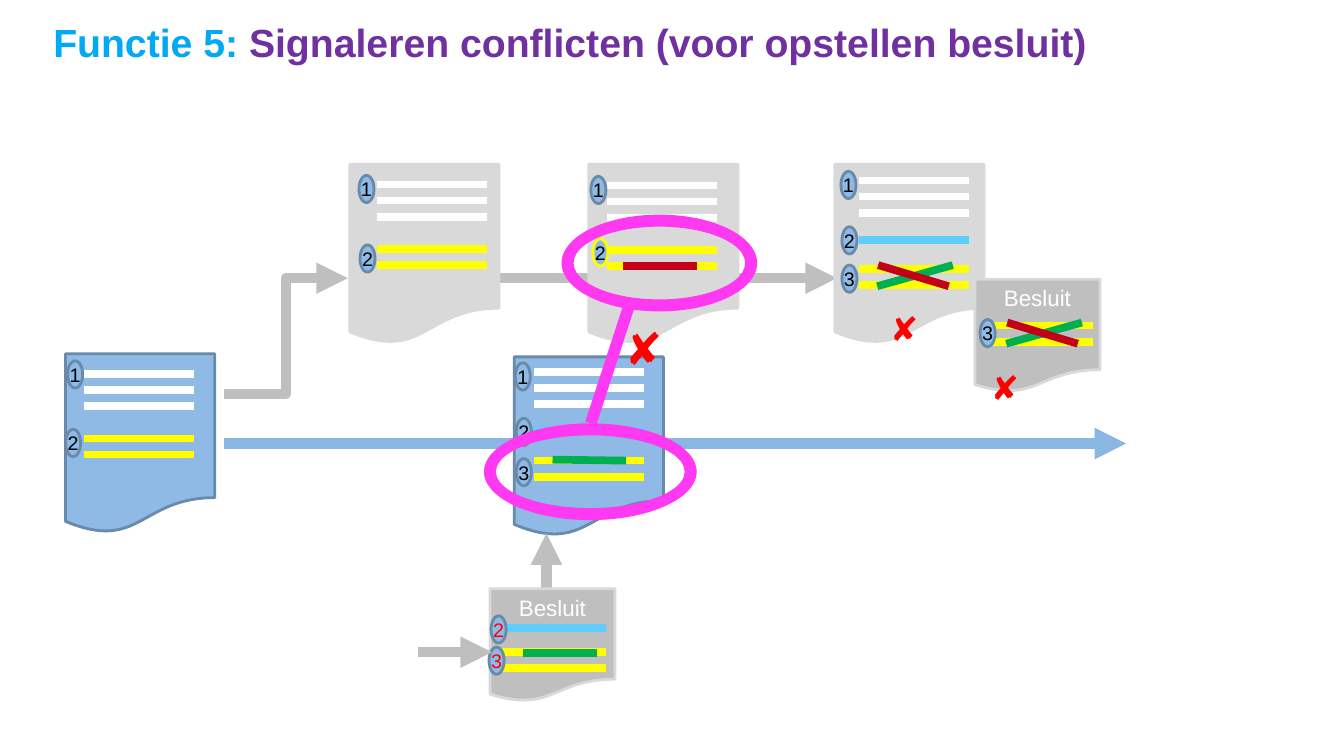
from dataclasses import dataclass

from lxml.etree import SubElement
from pptx import Presentation
from pptx.dml.color import RGBColor
from pptx.enum.shapes import MSO_CONNECTOR, MSO_SHAPE
from pptx.enum.text import MSO_ANCHOR, PP_ALIGN
from pptx.oxml.ns import qn
from pptx.util import Emu, Pt

PX = 9144  # 100 px to the inch
DOC, OVAL, RING = MSO_SHAPE.FLOWCHART_DOCUMENT, MSO_SHAPE.OVAL, MSO_SHAPE.DONUT
STRAIGHT, ELBOW = MSO_CONNECTOR.STRAIGHT, MSO_CONNECTOR.ELBOW
TOP, MIDDLE = MSO_ANCHOR.TOP, MSO_ANCHOR.MIDDLE
LEFT, CENTER = PP_ALIGN.LEFT, PP_ALIGN.CENTER


@dataclass(frozen=True)
class Theme:
    font: str = "Arial"
    # Colours
    cyan: str = "00A9F3"
    purple: str = "7030A0"
    blue: str = "8EBAE5"
    edge: str = "698AA9"
    flow: str = "89B6E2"
    gray: str = "BFBFBF"
    pale: str = "D9D9D9"
    white: str = "FFFFFF"
    black: str = "000000"
    yellow: str = "FFFF00"
    sky: str = "5FCEFF"
    green: str = "00B050"
    crimson: str = "C20016"
    red: str = "FF0000"
    pink: str = "FF39F2"
    # Type sizes and line widths, in points
    title: int = 28
    label: int = 16
    digit: int = 14
    big: int = 32
    small: int = 24
    rim: float = 2
    bar: float = 5.5
    arrow: float = 7.5
    link: float = 8.25


def put(item, values):
    for name, value in values.items():
        setattr(item, name, value)


class Board:
    def __init__(self, slide, theme):
        self.slide, self.theme = slide, theme

    def fill(self, shape, runs, size, align=LEFT, anchor=TOP, wrap=False, **insets):
        frame = shape.text_frame
        put(frame, dict(word_wrap=wrap, vertical_anchor=anchor, **insets))
        para = frame.paragraphs[0]
        para.alignment = align
        for text, color, bold in runs:
            run = para.add_run()
            run.text = text
            put(run.font, dict(name=self.theme.font, size=Pt(size), bold=bold))
            run.font.color.rgb = RGBColor.from_string(color)

    def text(self, box, runs, size, wrap=False):
        shape = self.slide.shapes.add_textbox(*[Emu(v * PX) for v in box])
        self.fill(shape, runs, size, wrap=wrap)

    def shape(self, kind, box, fill, edge=None):
        shape = self.slide.shapes.add_shape(kind, *[Emu(v * PX) for v in box])
        shape.shadow.inherit = False
        shape.fill.solid()
        shape.fill.fore_color.rgb = RGBColor.from_string(fill)
        if edge:
            shape.line.color.rgb = RGBColor.from_string(edge)
            shape.line.width = Pt(self.theme.rim)
        else:
            shape.line.fill.background()
        return shape

    def line(self, ends, color, width, head=False, kind=STRAIGHT):
        line = self.slide.shapes.add_connector(kind, *[Emu(v * PX) for v in ends])
        line.line.color.rgb = RGBColor.from_string(color)
        line.line.width = Pt(width)
        stroke = line.get_or_add_ln()
        SubElement(stroke, qn("a:round"))
        if head:
            SubElement(stroke, qn("a:tailEnd"), type="triangle")
        SubElement(line.element.spPr, qn("a:effectLst"))

    def arrow(self, ends, color, kind=STRAIGHT):
        self.line(ends, color, self.theme.arrow, True, kind)

    def bar(self, ends, color):
        self.line(ends, color, self.theme.bar)

    def badge(self, x, y, digit, color=None, edge=None):
        t = self.theme
        oval = self.shape(OVAL, (x, y, 15, 27), t.blue, edge or t.edge)
        self.fill(oval, [(digit, color or t.black, False)], t.digit, CENTER, MIDDLE,
                  margin_left=0, margin_right=0, margin_top=0, margin_bottom=0)

    def sheet(self, x, y, fill, edge, left, bars, badges, label=None):
        """A document with its text bars and numbered badges."""
        t = self.theme
        size = (124, 112) if label else (148, 178)
        page = self.shape(DOC, (x, y, *size), fill, edge)
        if label:
            self.fill(page, [(label, t.white, False)], t.label, CENTER)
        for color, top, count in bars:
            for i in range(count):
                level = top + 16 * i
                self.bar((left, level, left + 109, level), color)
        for badge in badges:
            self.badge(*badge)

    def ring(self, box):
        self.shape(RING, box, self.theme.pink).adjustments[0] = 0.124

    def cross(self, box, size):
        self.text(box, [("✘", self.theme.red, False)], size)


def main():
    deck = Presentation()
    put(deck, dict(slide_width=Emu(1333 * PX), slide_height=Emu(750 * PX)))
    t = Theme()
    b = Board(deck.slides.add_slide(deck.slide_layouts[6]), t)
    old, new, act = (t.pale, t.pale), (t.blue, t.edge), (t.gray, t.pale)

    # Title
    b.text((43, 13, 1282, 104),
           [("Functie 5: ", t.cyan, True),
            ("Signaleren conflicten (voor opstellen besluit)", t.purple, True)],
           t.title, wrap=True)

    # Flow behind the documents
    b.arrow((222, 440, 1117, 440), t.flow)
    b.arrow((222, 391, 345, 276), t.gray, ELBOW)
    b.arrow((464, 276, 830, 276), t.gray)

    # Start version and the two drafts
    b.sheet(65, 351, *new, 83, [(t.white, 371, 3), (t.yellow, 435, 2)],
            [(65, 426, "2"), (67, 358, "1")])
    b.sheet(347, 163, *old, 374, [(t.white, 183, 3), (t.yellow, 247, 2)],
            [(356, 174, "1"), (357, 243, "2")])
    b.sheet(584, 163, *old, 602, [(t.white, 184, 3), (t.yellow, 248, 2)],
            [(588, 237, "2", t.black, t.yellow), (586, 175, "1")])

    # New version, fed by a decision
    b.sheet(510, 354, *new, 530,
            [(t.white, 369, 3), (t.yellow, 457, 2), (t.sky, 427, 1)],
            [(511, 360, "1"), (512, 415, "2"), (512, 455, "3")])
    b.arrow((542, 586, 542, 529), t.gray)
    b.sheet(486, 584, *act, 492, [(t.sky, 623, 1), (t.yellow, 647, 2)],
            [(487, 611, "2", t.red), (485, 642, "3", t.red)], "Besluit")

    # Final draft with its decision
    b.sheet(828, 163, *old, 852,
            [(t.white, 179, 3), (t.yellow, 267, 2), (t.sky, 238, 1)],
            [(834, 170, "1"), (835, 263, "3"), (835, 225, "2")])
    b.sheet(967, 277, *act, 975, [(t.yellow, 323, 2)], [(972, 317, "3")], "Besluit")

    # Changed passages
    for ends, color in [((618, 264, 691, 264), t.crimson),
                        ((519, 648, 592, 648), t.green),
                        ((548, 456, 621, 457), t.green)]:
        b.bar(ends, color)

    # Conflict: two rings and their link
    b.ring((557, 213, 194, 96))
    b.ring((480, 420, 211, 96))
    b.line((626, 297, 586, 420), t.pink, t.link)

    # Crossed-out passages
    for x, y in [(870, 263), (998, 320)]:
        b.bar((x, y + 21, x + 75, y), t.green)
        b.bar((x + 1, y, x + 71, y + 21), t.crimson)

    # Rejection marks
    b.cross((610, 313, 57, 64), t.big)
    for x, y in [(973, 359), (873, 301)]:
        b.cross((x, y, 48, 50), t.small)

    # Arrow into the lower decision
    b.arrow((415, 647, 488, 647), t.gray)

    deck.save("out.pptx")


if __name__ == "__main__":
    main()
